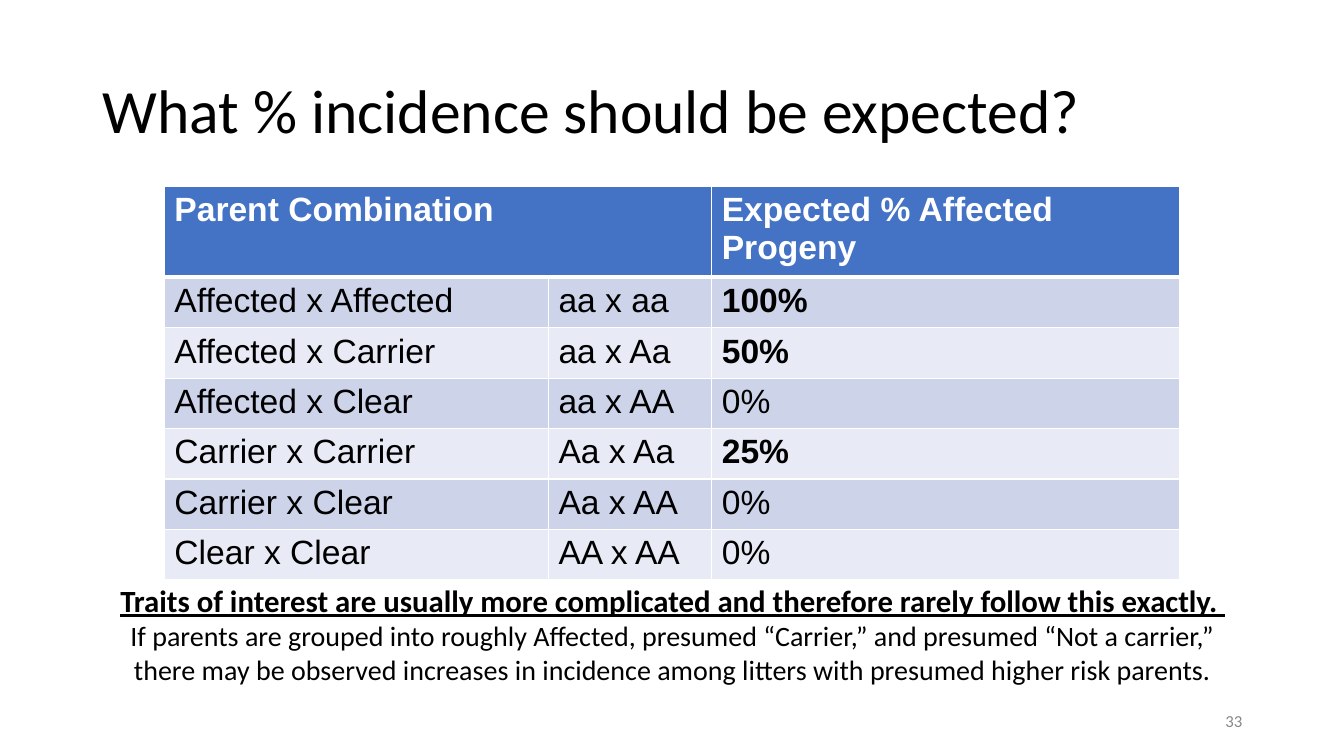
from dataclasses import dataclass

from lxml import etree
from pptx import Presentation
from pptx import util as u
from pptx.dml.color import RGBColor
from pptx.enum import text as t
from pptx.oxml.ns import qn

SCALE = 9144


@dataclass(frozen=True)
class Theme:
    body: str = "Calibri"
    grid: str = "Arial"
    ink: str = "000000"
    white: str = "FFFFFF"
    gray: str = "888888"
    head: str = "4472C4"
    bands: tuple = ("CDD4EA", "E8EBF5")
    title: int = 44
    cell: int = 24
    lead: int = 22
    note: int = 20
    page: int = 12


THEME = Theme()
COLS = (381, 162, 464)
ROW = 41
HEADS = ("Parent Combination", "", "Expected % Affected Progeny")
ROWS = (
    ("Affected x Affected", "aa x aa", "100%"),
    ("Affected x Carrier", "aa x Aa", "50%"),
    ("Affected x Clear", "aa x AA", "0%"),
    ("Carrier x Carrier", "Aa x Aa", "25%"),
    ("Carrier x Clear", "Aa x AA", "0%"),
    ("Clear x Clear", "AA x AA", "0%"),
)


def px(size):
    return u.Emu(size * SCALE)


def style(para, face, size, color, bold=False, under=False):
    for run in para.runs:
        font = run.font
        font.name = face
        font.size = u.Pt(size)
        font.color.rgb = RGBColor.from_string(color)
        font.bold = bold
        font.underline = under


def add_text(slide, area, lines, align, anchor):
    box = slide.shapes.add_textbox(*map(px, area))
    frame = box.text_frame
    frame.word_wrap = True
    frame.vertical_anchor = anchor
    frame.text = "\n".join(line for line, *_ in lines)
    for para, (_, *look) in zip(frame.paragraphs, lines):
        para.alignment = align
        style(para, THEME.body, *look)
    return frame


def add_edge(cell, side, width):
    props = cell._tc.get_or_add_tcPr()
    line = etree.SubElement(props, qn(f"a:ln{side}"), w=str(u.Pt(width)))
    fill = etree.SubElement(line, qn("a:solidFill"))
    etree.SubElement(fill, qn("a:srgbClr"), val=THEME.white)


def fill_cell(cell, words, row):
    cell.text = words
    head = row == 0
    color = THEME.white if head else THEME.ink
    bold = head or (words.endswith("%") and words != "0%")
    style(cell.text_frame.paragraphs[0], THEME.grid, THEME.cell, color, bold)
    edges = {"L": 1, "R": 1, "T": 3 if row == 1 else 1, "B": 3 if head else 1}
    for side, width in edges.items():
        add_edge(cell, side, width)
    cell.fill.solid()
    shade = THEME.head if head else THEME.bands[(row - 1) % 2]
    cell.fill.fore_color.rgb = RGBColor.from_string(shade)


def add_grid(slide, left, top):
    rows = (HEADS, *ROWS)
    area = (left, top, sum(COLS), ROW * len(rows))
    grid = slide.shapes.add_table(len(rows), len(COLS), *map(px, area)).table
    for col, width in zip(grid.columns, COLS):
        col.width = px(width)
    for r, row in enumerate(rows):
        for c, words in enumerate(row):
            fill_cell(grid.cell(r, c), words, r)
    grid.cell(0, 0).merge(grid.cell(0, 1))


def main():
    deck = Presentation()
    deck.slide_width, deck.slide_height = px(1333), px(750)
    slide = deck.slides.add_slide(deck.slide_layouts[6])
    align, anchor = t.PP_ALIGN, t.MSO_ANCHOR

    title = add_text(
        slide, (92, 40, 1150, 145),
        [("What % incidence should be expected?", THEME.title, THEME.ink)],
        align.LEFT, anchor.MIDDLE)
    title.paragraphs[0].line_spacing = 0.9

    add_grid(slide, 163, 185)

    note = add_text(
        slide, (100, 572, 1134, 114),
        [("Traits of interest are usually more complicated and therefore "
          "rarely follow this exactly. ", THEME.lead, THEME.ink, True, True),
         ("If parents are grouped into roughly Affected, presumed “Carrier,” "
          "and presumed “Not a carrier,” there may be observed increases in "
          "incidence among litters with presumed higher risk parents.",
          THEME.note, THEME.ink)],
        align.CENTER, anchor.TOP)
    note.auto_size = t.MSO_AUTO_SIZE.SHAPE_TO_FIT_TEXT

    add_text(slide, (942, 695, 300, 40), [("33", THEME.page, THEME.gray)],
             align.RIGHT, anchor.MIDDLE)

    deck.save("out.pptx")


if __name__ == "__main__":
    main()
